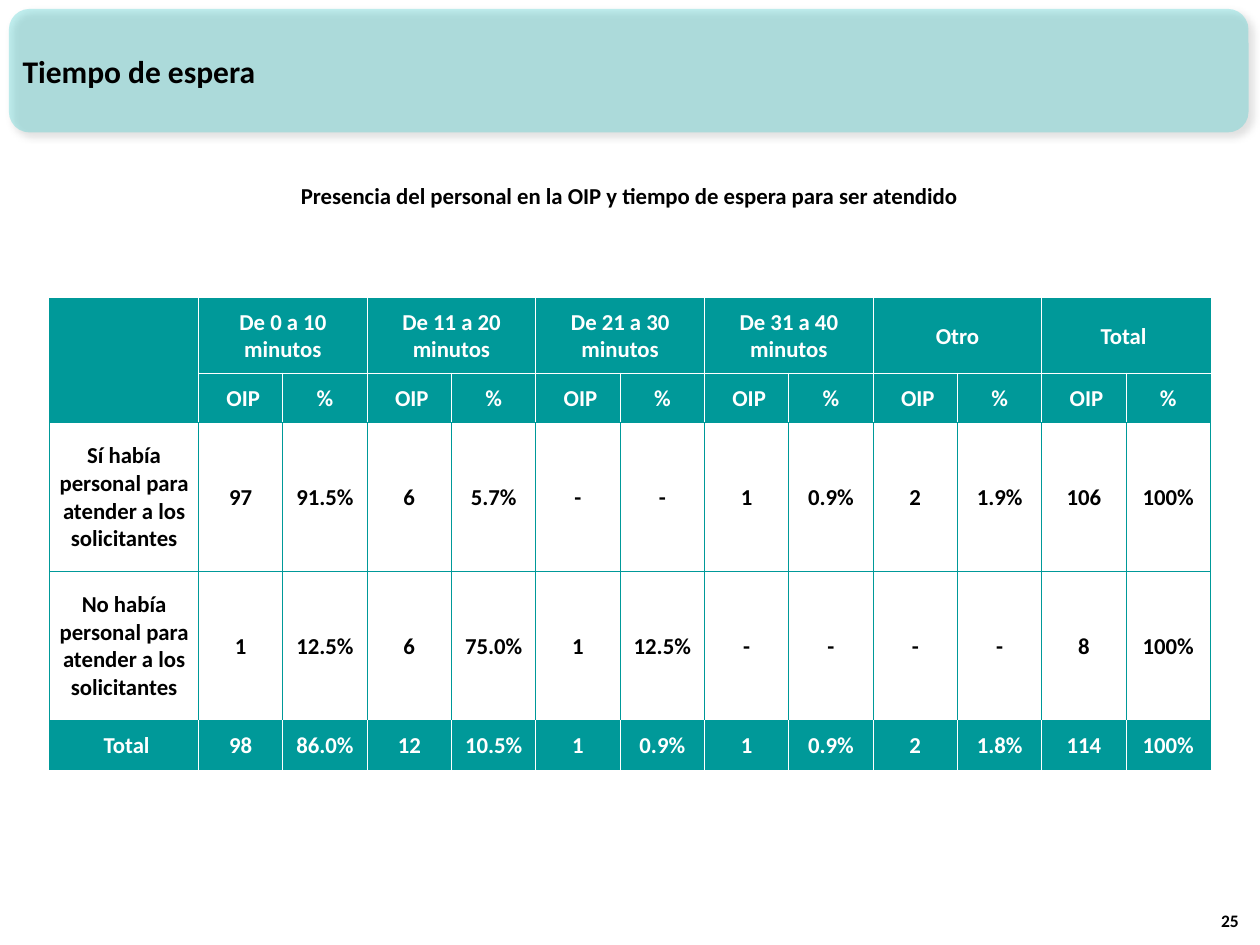
"""Build the slide on waiting time and staff presence at the OIP."""
from lxml import etree
from pptx import Presentation
from pptx import util as u
from pptx.dml import color
from pptx.enum import shapes, text
from pptx.oxml import ns

TITLE = "Tiempo de espera"
SUBTITLE = "Presencia del personal en la OIP y tiempo de espera para ser atendido"
PAGE = "25"
WAITS = ["De 0 a 10 minutos", "De 11 a 20 minutos", "De 21 a 30 minutos",
         "De 31 a 40 minutos", "Otro", "Total "]
MEASURES = [" OIP", "%"]
ANSWERS = [
    ["Sí había personal para atender a los solicitantes", "97", "91.5%", "6", "5.7%",
     "-", "-", "1", "0.9%", "2", "1.9%", "106", "100%"],
    ["No había personal para atender a los solicitantes", "1", "12.5%", "6", "75.0%",
     "1", "12.5%", "-", "-", "-", "-", "8", "100%"],
    [" Total", "98", "86.0%", "12", "10.5%", "1", "0.9%", "1", "0.9%", "2", "1.8%",
     "114", "100%"],
]
COLUMN_WIDTHS = [3] + [1.7] * 12
ROW_HEIGHTS = [1.5, 1, 3, 3, 1]
BODY_ROWS = (2, 3)
TEAL, WHITE, BLACK, AQUA = "009999", "FFFFFF", "000000", "33CCCC"
CENTER, LEFT, RIGHT = text.PP_ALIGN.CENTER, text.PP_ALIGN.LEFT, text.PP_ALIGN.RIGHT
MIDDLE, TOP, BOTTOM = text.MSO_ANCHOR.MIDDLE, text.MSO_ANCHOR.TOP, text.MSO_ANCHOR.BOTTOM
CELL_FORMAT = {"vertical_anchor": MIDDLE, "margin_left": u.Cm(0.02),
               "margin_top": u.Cm(0.02), "margin_right": u.Cm(0.02), "margin_bottom": 0}


def cm(*lengths):
    return [u.Cm(length) for length in lengths]


def rgb(hex_code):
    return color.RGBColor.from_string(hex_code)


def apply(target, values):
    for name, value in values.items():
        setattr(target, name, value)


def child(parent, tag, **attributes):
    return etree.SubElement(parent, ns.qn(tag), {k: str(v) for k, v in attributes.items()})


def write(frame, wording, size, ink=BLACK, align=CENTER):
    paragraph = frame.paragraphs[0]
    paragraph.alignment = align
    run = paragraph.add_run()
    run.text = wording
    apply(run.font, {"size": u.Pt(size), "name": "Calibri", "bold": True})
    run.font.color.rgb = rgb(ink)


def place(shape, box):
    apply(shape, dict(zip(("left", "top", "width", "height"), cm(*box))))


def add_label(slide, wording, box, size, align, anchor):
    label = slide.shapes.add_textbox(*cm(*box))
    apply(label.text_frame, {"word_wrap": True, "vertical_anchor": anchor})
    write(label.text_frame, wording, size, align=align)


def add_banner(slide):
    banner = slide.shapes.add_shape(shapes.MSO_SHAPE.ROUNDED_RECTANGLE,
                                    *cm(0.18, 0.18, 24.99, 2.49))
    banner.shadow.inherit = False
    banner.line.fill.background()
    banner.fill.solid()
    banner.fill.fore_color.rgb = rgb(AQUA)
    properties = banner.element.spPr
    child(properties.find(".//" + ns.qn("a:srgbClr")), "a:alpha", val=30000)
    shadow = child(properties.find(ns.qn("a:effectLst")), "a:outerShdw",
                   blurRad=u.Pt(4), dist=u.Pt(3), dir=45 * 60000, algn="tl", rotWithShape=0)
    child(child(shadow, "a:srgbClr", val=BLACK), "a:alpha", val=40000)
    slide.shapes.title.element.addprevious(banner.element)


def border_cell(cell, borders):
    properties = cell._tc.get_or_add_tcPr()
    for side, ink in borders.items():
        line = child(properties, f"a:ln{side}", w=u.Pt(0.5))
        child(child(line, "a:solidFill"), "a:srgbClr", val=ink)


def add_answers(slide):
    headings = [[""] + [part for wait in WAITS for part in (wait, "")],
                [""] + MEASURES * len(WAITS)]
    rows = headings + ANSWERS
    last = len(COLUMN_WIDTHS) - 1
    frame = slide.shapes.add_table(len(rows), last + 1, *cm(
        1, 6.02, sum(COLUMN_WIDTHS), sum(ROW_HEIGHTS)))
    table = frame.table
    apply(table, {"first_row": False, "horz_banding": False})
    for column, width in zip(table.columns, COLUMN_WIDTHS):
        column.width = u.Cm(width)
    for row, height in zip(table.rows, ROW_HEIGHTS):
        row.height = u.Cm(height)
    table.cell(0, 0).merge(table.cell(1, 0))
    for c in range(1, last, 2):
        table.cell(0, c).merge(table.cell(0, c + 1))
    for r, row in enumerate(rows):
        for c, wording in enumerate(row):
            cell = table.cell(r, c)
            body = r in BODY_ROWS
            end = c + cell.span_width - 1 if cell.is_merge_origin else c
            inner = {"L": c > 0, "R": end < last, "T": r == 1 and c > 0,
                     "B": r == 0 and c > 0}
            border_cell(cell, {side: WHITE if white and not body else TEAL
                               for side, white in inner.items()})
            apply(cell, CELL_FORMAT)
            if body:
                cell.fill.background()
            else:
                cell.fill.solid()
                cell.fill.fore_color.rgb = rgb(TEAL)
            if wording:
                write(cell.text_frame, wording, 13, BLACK if body else WHITE)


def main():
    deck = Presentation()
    deck.slide_width, deck.slide_height = cm(25.4, 19.05)
    slide = deck.slides.add_slide(deck.slide_layouts[5])
    title = slide.shapes.title
    place(title, (0.2, 0.23, 23.6, 2.39))
    title.text_frame.vertical_anchor = MIDDLE
    write(title.text_frame, TITLE, 18, align=LEFT)
    add_banner(slide)
    add_label(slide, PAGE, (24, 17.88, 1.22, 1.02), 10, RIGHT, BOTTOM)
    add_label(slide, SUBTITLE, (4.85, 3.53, 15.65, 0.81), 13, CENTER, TOP)
    add_answers(slide)
    deck.save("out.pptx")


if __name__ == "__main__":
    main()
